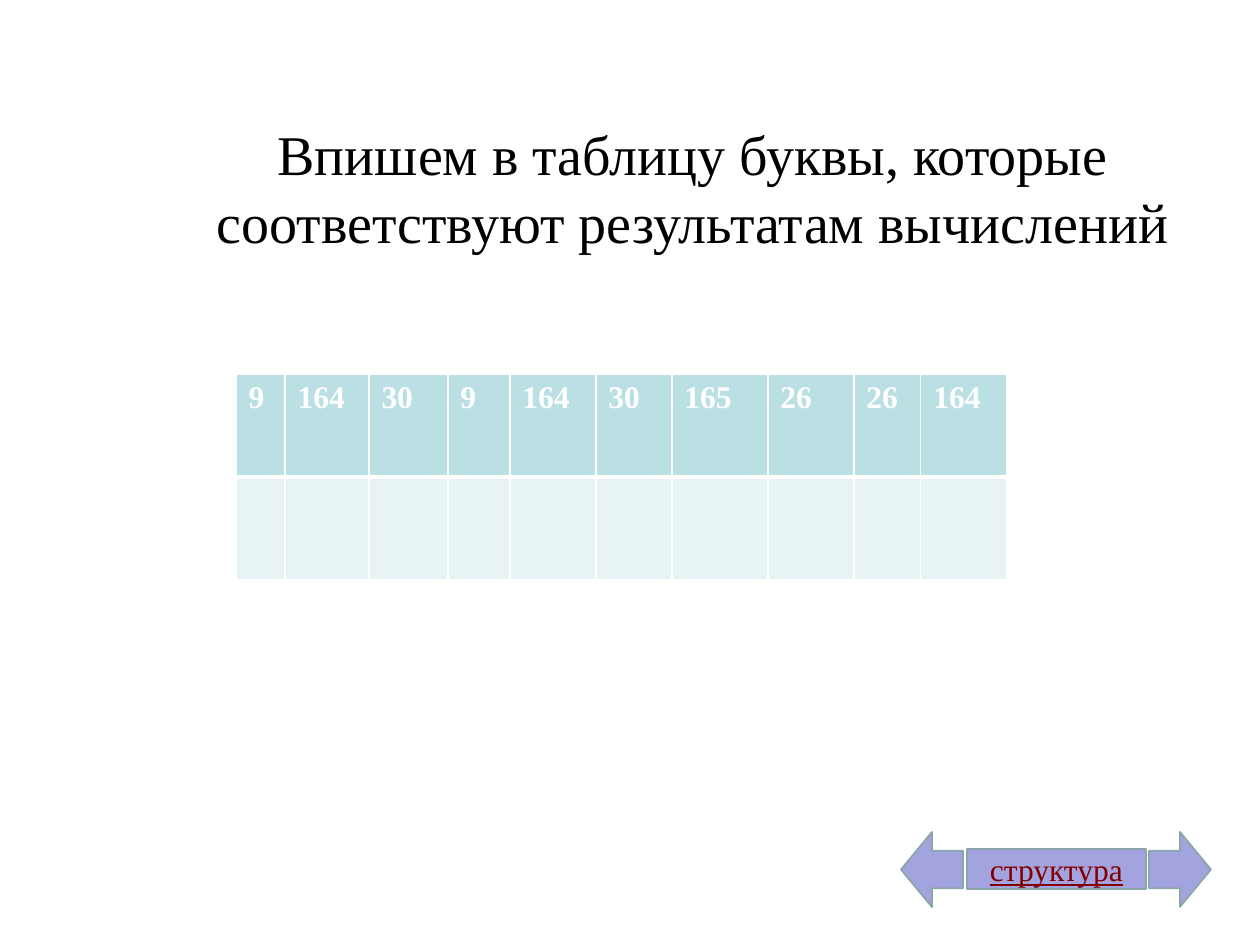
from pptx import Presentation
from pptx.dml.color import RGBColor
from pptx.enum.shapes import MSO_SHAPE
from pptx.enum.text import MSO_ANCHOR, PP_ALIGN
from pptx.oxml import parse_xml
from pptx.oxml.ns import nsdecls
from pptx.util import Pt

PX = 914400 // 126
FONT = "Times New Roman"
BLACK = RGBColor(0x00, 0x00, 0x00)
WHITE = RGBColor(0xFF, 0xFF, 0xFF)
MAROON = RGBColor(0x80, 0x00, 0x00)
LILAC = RGBColor(0xA3, 0xA3, 0xE0)
GREY = RGBColor(0x8A, 0xA6, 0xA8)
TEAL = RGBColor(0xBB, 0xE0, 0xE3)
PALE = RGBColor(0xE7, 0xF3, 0xF4)

CODES = ["9", "164", "30", "9", "164", "30", "165", "26", "26", "164"]
WIDTHS = [49, 84, 79, 62, 86, 76, 96, 86, 67, 86]
ROW = 103


def scale(*sizes):
    return [size * PX for size in sizes]


def add_run(para, text, size, color, bold=False, line=False):
    run = para.add_run()
    run.text = text
    font = run.font
    font.name, font.size = FONT, Pt(size)
    font.bold, font.underline = bold, line
    font.color.rgb = color


def add_title(slide, text, *box):
    frame = slide.shapes.add_textbox(*scale(*box)).text_frame
    frame.word_wrap = True
    frame.vertical_anchor = MSO_ANCHOR.MIDDLE
    para = frame.paragraphs[0]
    para.alignment = PP_ALIGN.CENTER
    add_run(para, text, 32, BLACK)


def add_button(slide, kind, *box):
    shape = slide.shapes.add_shape(kind, *scale(*box))
    shape.shadow.inherit = False
    shape.fill.solid()
    shape.fill.fore_color.rgb = LILAC
    shape.line.color.rgb = GREY
    shape.line.width = Pt(1)
    return shape


def add_label(shape, text):
    frame = shape.text_frame
    frame.vertical_anchor = MSO_ANCHOR.MIDDLE
    para = frame.paragraphs[0]
    para.alignment = PP_ALIGN.CENTER
    add_run(para, text, 18, MAROON, line=True)


def style_cell(cell, color, top, bottom):
    # Borders come before the fill in the cell properties
    props = cell._tc.get_or_add_tcPr()
    for side, width in zip("LRTB", (1, 1, top, bottom)):
        props.append(parse_xml(
            f'<a:ln{side} {nsdecls("a")} w="{Pt(width)}"><a:solidFill>'
            f'<a:srgbClr val="{WHITE}"/></a:solidFill></a:ln{side}>'))
    cell.fill.solid()
    cell.fill.fore_color.rgb = color


def add_grid(slide, left, top):
    box = scale(left, top, sum(WIDTHS), 2 * ROW)
    table = slide.shapes.add_table(2, len(CODES), *box).table
    for row in table.rows:
        row.height = ROW * PX
    for col, (code, width) in enumerate(zip(CODES, WIDTHS)):
        table.columns[col].width = width * PX
        head, blank = table.cell(0, col), table.cell(1, col)
        style_cell(head, TEAL, 1, 3)
        style_cell(blank, PALE, 3, 1)
        add_run(head.text_frame.paragraphs[0], code, 18, WHITE, bold=True)


def main():
    deck = Presentation()
    deck.slide_width, deck.slide_height = scale(1260, 945)
    slide = deck.slides.add_slide(deck.slide_layouts[6])

    # Heading
    add_title(slide, "Впишем в таблицу буквы, которые соответствуют "
              "результатам вычислений", 126, 108, 1134, 158)

    # Navigation buttons
    home = add_button(slide, MSO_SHAPE.RECTANGLE, 967, 849, 179, 40)
    add_label(home, "структура")
    add_button(slide, MSO_SHAPE.RIGHT_ARROW, 1149, 832, 62, 75)
    back = add_button(slide, MSO_SHAPE.RIGHT_ARROW, 901, 832, 62, 75)
    back.rotation = 180

    # Table of results with room for letters
    add_grid(slide, 236, 374)

    deck.save("out.pptx")


if __name__ == "__main__":
    main()
